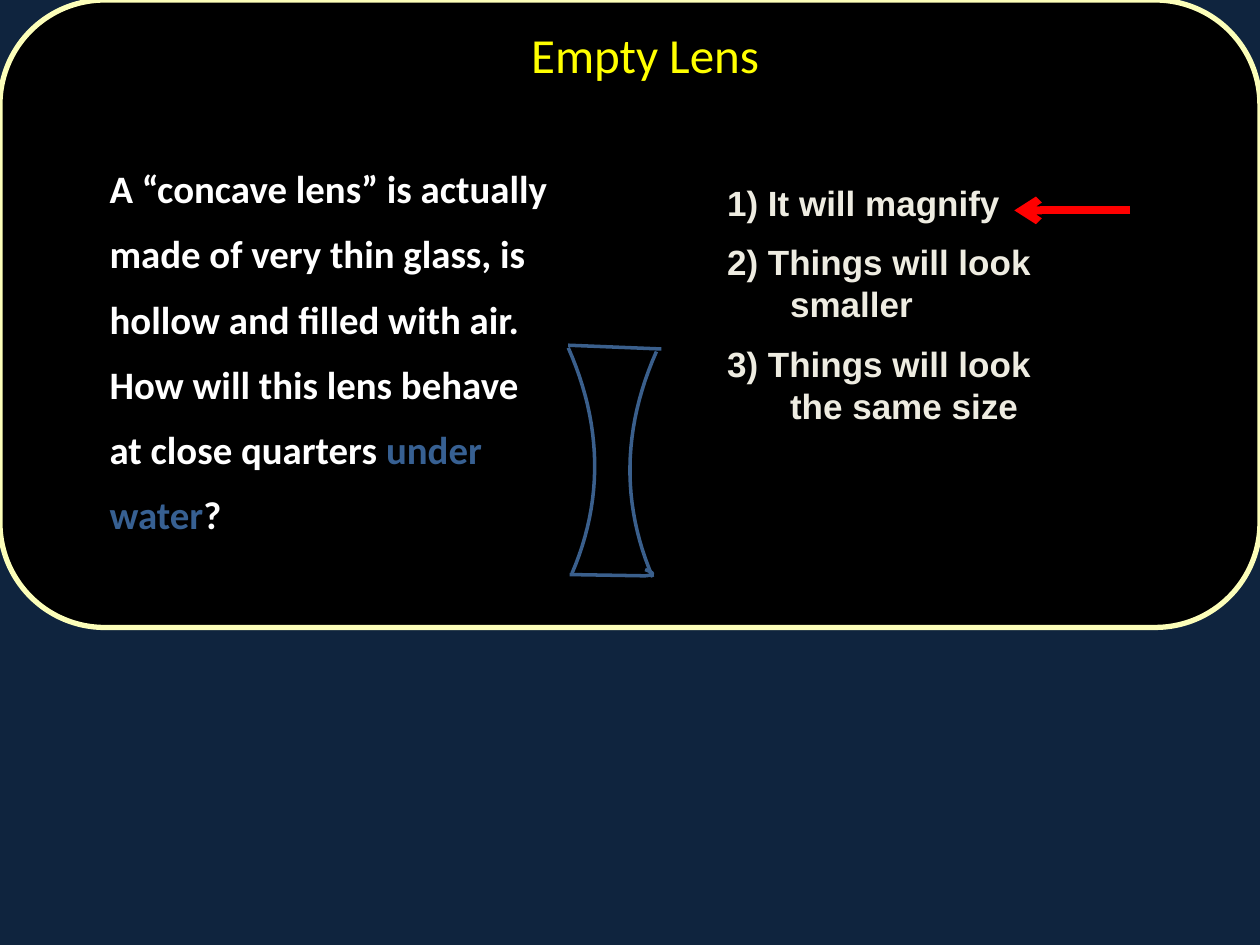
from dataclasses import dataclass

from lxml.etree import SubElement
from pptx import Presentation
from pptx.dml.color import RGBColor
from pptx.enum.shapes import MSO_CONNECTOR, MSO_SHAPE
from pptx.enum.text import MSO_ANCHOR, PP_ALIGN
from pptx.oxml.ns import qn
from pptx.util import Inches, Pt

COLORS = {
    "background": "0F243E",
    "panel": "000000",
    "border": "FCFEB9",
    "title": "FFFF00",
    "question": "FFFFFF",
    "highlight": "376092",
    "answer": "EEECE1",
    "lens": "3A5F8C",
    "arrow": "FF0000",
}
CURVE_STEPS = 24

Point = tuple[float, float]


@dataclass
class Span:
    text: str
    color: str


@dataclass
class TextStyle:
    font: str
    size: float
    bold: bool = False
    spacing: float | Pt = 1.0
    after: float = 0
    hanging: float = 0
    align: PP_ALIGN = PP_ALIGN.LEFT
    anchor: MSO_ANCHOR = MSO_ANCHOR.TOP


@dataclass
class Curve:
    start: Point
    first_control: Point
    second_control: Point
    end: Point

    def points(self) -> list[Point]:
        """Return evenly stepped points along the cubic curve."""
        steps = [step / CURVE_STEPS for step in range(CURVE_STEPS + 1)]
        corners = (self.start, self.first_control, self.second_control, self.end)
        result = []
        for t in steps:
            weights = ((1 - t) ** 3, 3 * t * (1 - t) ** 2, 3 * t * t * (1 - t), t**3)
            x, y = (sum(w * corner[axis] for w, corner in zip(weights, corners)) for axis in (0, 1))
            result.append((x, y))
        return result


TITLE = TextStyle("Calibri", 28, spacing=0.9, align=PP_ALIGN.CENTER, anchor=MSO_ANCHOR.MIDDLE)
QUESTION = TextStyle("Calibri", 22.2, bold=True, spacing=1.4)
ANSWER = TextStyle("Arial", 20, bold=True, spacing=Pt(24), after=10, hanging=0.5)

QUESTION_TEXT = [
    [Span("A “concave lens” is actually made of very thin glass, is hollow and filled with air.", "question")],
    [
        Span("How will this lens behave at close quarters ", "question"),
        Span("under water", "highlight"),
        Span("?", "question"),
    ],
]
ANSWERS = ["1) It will magnify", "2) Things will look smaller", "3) Things will look the same size"]

LENS_OUTLINES = [
    Curve((4.51, 2.76), (4.78, 3.37), (4.79, 3.97), (4.54, 4.55)).points(),
    Curve((5.21, 2.79), (4.94, 3.4), (4.93, 4), (5.18, 4.58)).points(),
    [(4.51, 2.74), (5.25, 2.77)],
    [(4.52, 4.56), *Curve((5.12, 4.57), (5.22, 4.56), (5.17, 4.54), (5.12, 4.52)).points()],
]


def color(name: str) -> RGBColor:
    """Look up a named colour."""
    return RGBColor.from_string(COLORS[name])


def add_panel(page) -> None:
    """Draw the rounded panel behind the question."""
    panel = page.shapes.add_shape(MSO_SHAPE.ROUNDED_RECTANGLE, 0, 0, Inches(10), Inches(4.98))
    panel.adjustments[0] = 0.167
    panel.shadow.inherit = False
    panel.fill.solid()
    panel.fill.fore_color.rgb = color("panel")
    panel.line.color.rgb = color("border")
    panel.line.width = Pt(3)


def add_text(
    page, left: float, top: float, width: float, height: float,
    paragraphs: list[list[Span]], style: TextStyle,
) -> None:
    """Place styled paragraphs in a wrapping box without margins."""
    box = page.shapes.add_textbox(Inches(left), Inches(top), Inches(width), Inches(height))
    frame = box.text_frame
    frame.word_wrap = True
    frame.vertical_anchor = style.anchor
    frame.margin_left = frame.margin_right = frame.margin_top = frame.margin_bottom = 0
    for index, spans in enumerate(paragraphs):
        para = frame.add_paragraph() if index else frame.paragraphs[0]
        para.alignment = style.align
        para.line_spacing = style.spacing
        para.space_after = Pt(style.after)
        if style.hanging:
            properties = para._p.get_or_add_pPr()
            properties.set("marL", str(Inches(style.hanging)))
            properties.set("indent", str(-Inches(style.hanging)))
        for span in spans:
            run = para.add_run()
            run.text = span.text
            run.font.name = style.font
            run.font.size = Pt(style.size)
            run.font.bold = style.bold
            run.font.color.rgb = color(span.color)


def add_lens(page) -> None:
    """Draw the hollow lens as a group of open outlines."""
    lens = page.shapes.add_group_shape()
    for outline_points in LENS_OUTLINES:
        start, *rest = [(Inches(x), Inches(y)) for x, y in outline_points]
        builder = lens.shapes.build_freeform(*start)
        builder.add_line_segments(rest, close=False)
        outline = builder.convert_to_shape()
        outline.shadow.inherit = False
        outline.fill.background()
        outline.line.color.rgb = color("lens")
        outline.line.width = Pt(2)


def add_answer_arrow(page) -> None:
    """Point an arrow at the first answer."""
    arrow = page.shapes.add_connector(
        MSO_CONNECTOR.STRAIGHT, Inches(8.97), Inches(1.67), Inches(8.05), Inches(1.67)
    )
    arrow.line.color.rgb = color("arrow")
    arrow.line.width = Pt(4.5)
    SubElement(arrow.line._get_or_add_ln(), qn("a:tailEnd"), type="arrow")
    SubElement(arrow._element.spPr, qn("a:effectLst"))


def main() -> None:
    """Build the lens question slide."""
    deck = Presentation()
    deck.slide_width, deck.slide_height = Inches(10), Inches(7.5)
    page = deck.slides.add_slide(deck.slide_layouts[6])
    page.background.fill.solid()
    page.background.fill.fore_color.rgb = color("background")
    add_panel(page)
    answers = [[Span(answer, "answer")] for answer in ANSWERS]
    add_text(page, 5.77, 1.44, 2.55, 2.6, answers, ANSWER)
    add_text(page, 0.87, 1.16, 3.51, 3.2, QUESTION_TEXT, QUESTION)
    add_text(page, 0.72, 0, 8.8, 0.92, [[Span("Empty Lens", "title")]], TITLE)
    add_lens(page)
    add_answer_arrow(page)
    deck.save("out.pptx")


if __name__ == "__main__":
    main()
